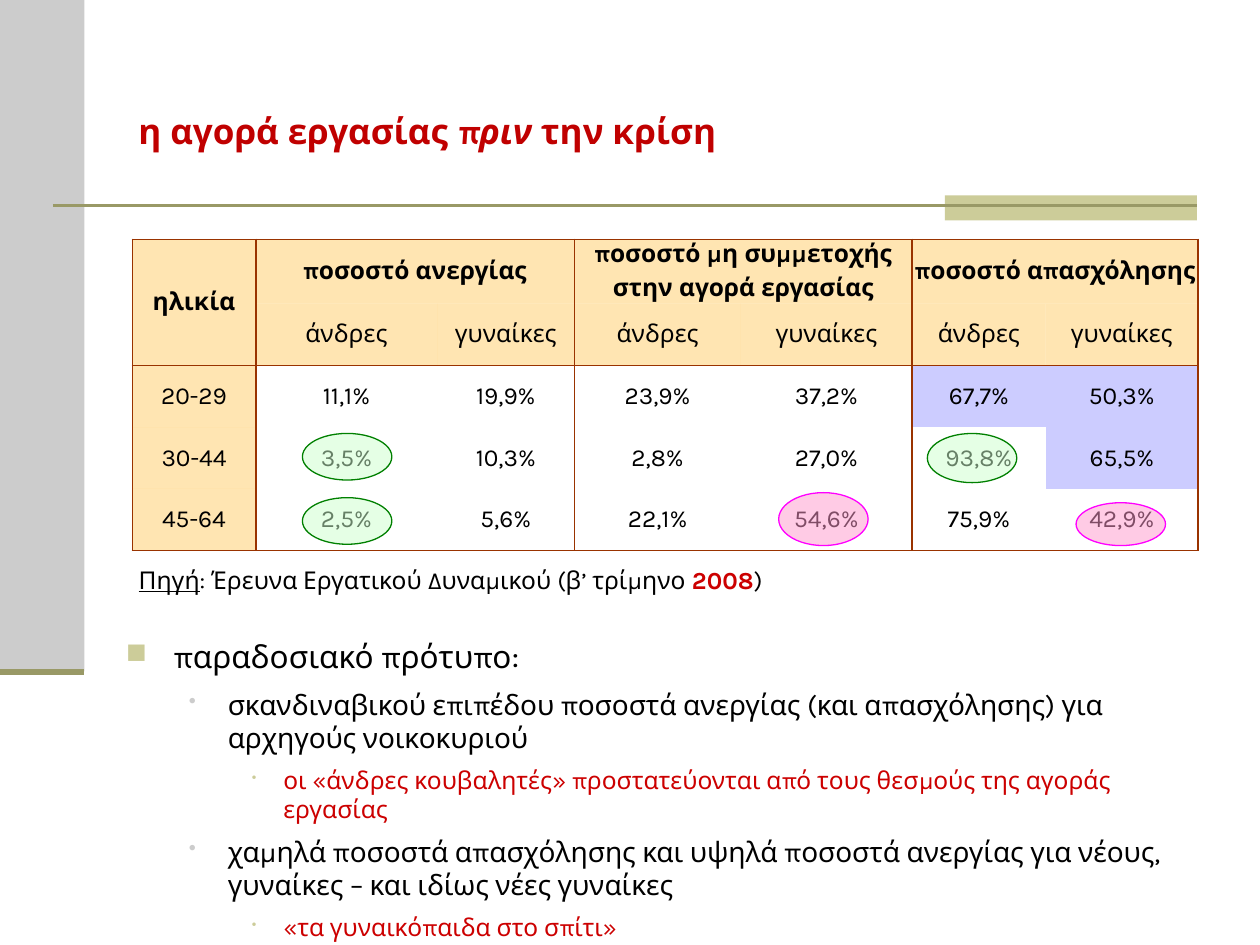
from lxml import etree
from pptx import Presentation
from pptx.dml.color import RGBColor
from pptx.enum.shapes import MSO_CONNECTOR, MSO_SHAPE
from pptx.enum.text import MSO_ANCHOR, PP_ALIGN
from pptx.oxml.ns import qn
from pptx.util import Inches, Pt

RECTANGLE, OVAL = MSO_SHAPE.RECTANGLE, MSO_SHAPE.OVAL
STRAIGHT = MSO_CONNECTOR.STRAIGHT
TOP, MIDDLE = MSO_ANCHOR.TOP, MSO_ANCHOR.MIDDLE
LEFT, CENTER = PP_ALIGN.LEFT, PP_ALIGN.CENTER

COLORS = {
    "black": "000000", "title": "C00000", "red": "CC0000",
    "gray": "CCCCCC", "khaki": "CCCC99", "olive": "999966",
    "header": "FFCC66", "border": "993300", "lilac": "CCCCFF",
    "mint": "CCFFCC", "green": "008000", "pink": "FF99CC", "magenta": "FF00FF",
}

COLUMN_WIDTHS = [0.98, 1.44, 1.09, 1.32, 1.36, 1.06, 1.21]
ROW_HEIGHTS = [0.51] + [0.49] * 5
GROUPS = ["ποσοστό ανεργίας", "ποσοστό μη συμμετοχής\nστην αγορά εργασίας", "ποσοστό απασχόλησης"]
RATES = [
    ["20-29", "11,1%", "19,9%", "23,9%", "37,2%", "67,7%", "50,3%"],
    ["30-44", "3,5%", "10,3%", "2,8%", "27,0%", "93,8%", "65,5%"],
    ["45-64", "2,5%", "5,6%", "22,1%", "54,6%", "75,9%", "42,9%"],
]
SOURCE_ROW = 5
HIGHLIGHTED = {(2, 5), (2, 6), (3, 6)}
SOURCE = [
    ("Πηγή", {"underline": True}),
    (": Έρευνα Εργατικού Δυναμικού (β’ τρίμηνο ", {}),
    ("2008", {"color": "red", "bold": True}),
    (")", {}),
]
LEVELS = [
    {"margin": 0.38, "hang": 0.38, "char": "■", "bullet": "khaki", "percent": 90, "size": 18, "color": "black"},
    {"margin": 0.81, "hang": 0.31, "char": "•", "bullet": "gray", "percent": 75, "size": 16, "color": "black"},
    {"margin": 1.25, "hang": 0.25, "char": "•", "bullet": "khaki", "percent": 55, "size": 14, "color": "red"},
]
POINTS = [
    (0, "παραδοσιακό πρότυπο:"),
    (1, "σκανδιναβικού επιπέδου ποσοστά ανεργίας (και απασχόλησης) για αρχηγούς νοικοκυριού"),
    (2, "οι «άνδρες κουβαλητές» προστατεύονται από τους θεσμούς της αγοράς εργασίας"),
    (1, "χαμηλά ποσοστά απασχόλησης και υψηλά ποσοστά ανεργίας για νέους, γυναίκες – και ιδίως νέες γυναίκες"),
    (2, "«τα γυναικόπαιδα στο σπίτι»"),
]
MARKS = [
    (7.36, 3.44, 0.39, "mint", "green"),
    (2.4, 3.44, 0.37, "mint", "green"),
    (8.54, 3.99, 0.34, "pink", "magenta"),
    (6.18, 3.91, 0.42, "pink", "magenta"),
    (2.4, 3.95, 0.37, "mint", "green"),
]


def rgb(name):
    return RGBColor.from_string(COLORS[name])


def write(para, text, size=14, color="black", bold=False, italic=False, underline=False):
    span = para.add_run()
    span.text = text
    font = span.font
    font.name, font.size = "Karla", Pt(size)
    font.bold, font.italic, font.underline = bold, italic, underline
    font.color.rgb = rgb(color)


def paint(fill, color, opacity=100):
    fill.solid()
    fill.fore_color.rgb = rgb(color)
    if opacity < 100:
        tint = fill._xPr.find(qn("a:solidFill")).find(qn("a:srgbClr"))
        etree.SubElement(tint, qn("a:alpha"), val=str(opacity * 1000))


def set_borders(cell, sides):
    properties = cell._tc.get_or_add_tcPr()
    for side in "LRTB":
        edge = etree.SubElement(properties, qn("a:ln" + side), w=str(Pt(1)))
        if side in sides:
            solid = etree.SubElement(edge, qn("a:solidFill"))
            etree.SubElement(solid, qn("a:srgbClr"), val=COLORS["border"])
        else:
            etree.SubElement(edge, qn("a:noFill"))


def border_sides(row, column):
    sides = "T" if row in (0, 2, SOURCE_ROW) else ""
    if row < SOURCE_ROW:
        if column == 0 or column % 2:
            sides += "L"
        if column % 2 == 0 or row == 0:
            sides += "R"
        if row in (1, 4) or (row, column) == (0, 0):
            sides += "B"
    return sides


class SlideBuilder:
    def __init__(self, page):
        self.page = page

    def shape(self, kind, left, top, width, height, fill, line=None, opacity=100):
        shape = self.page.shapes.add_shape(kind, Inches(left), Inches(top), Inches(width), Inches(height))
        shape.shadow.inherit = False
        paint(shape.fill, fill, opacity)
        if line:
            shape.line.color.rgb = rgb(line)
            shape.line.width = Pt(0.75)
        else:
            shape.line.fill.background()

    def rule(self, left, right, top, width):
        line = self.page.shapes.add_connector(STRAIGHT, Inches(left), Inches(top), Inches(right), Inches(top))
        line.line.color.rgb = rgb("olive")
        line.line.width = Pt(width)
        etree.SubElement(line._element.spPr, qn("a:effectLst"))

    def text_box(self, left, top, width, height, anchor):
        box = self.page.shapes.add_textbox(Inches(left), Inches(top), Inches(width), Inches(height))
        box.text_frame.word_wrap = True
        box.text_frame.vertical_anchor = anchor
        return box.text_frame

    def title(self, spans):
        para = self.text_box(1, 0.52, 8.5, 1.03, MIDDLE).paragraphs[0]
        for text, italic in spans:
            write(para, text, size=20, color="title", bold=True, italic=italic)

    def bullets(self, points):
        frame = self.text_box(0.9, 5.01, 8.54, 2.49, TOP)
        for index, (depth, text) in enumerate(points):
            level = LEVELS[depth]
            para = frame.paragraphs[0] if index == 0 else frame.add_paragraph()
            para.level = depth
            properties = para._p.get_or_add_pPr()
            properties.set("marL", str(Inches(level["margin"])))
            properties.set("indent", str(-Inches(level["hang"])))
            tint = etree.SubElement(properties, qn("a:buClr"))
            etree.SubElement(tint, qn("a:srgbClr"), val=COLORS[level["bullet"]])
            etree.SubElement(properties, qn("a:buSzPct"), val=str(level["percent"] * 1000))
            etree.SubElement(properties, qn("a:buChar"), char=level["char"])
            gap = Pt(level["size"] * 0.2)
            if index < len(points) - 1:
                para.space_after = gap
            if index:
                para.space_before = gap
            write(para, text, size=level["size"], color=level["color"])

    def cell(self, cell, lines, align=CENTER, inset=0):
        cell.vertical_anchor = MIDDLE
        cell.margin_left = Inches(inset)
        cell.margin_right = cell.margin_top = cell.margin_bottom = 0
        for index, spans in enumerate(lines):
            para = cell.text_frame.paragraphs[0] if index == 0 else cell.text_frame.add_paragraph()
            para.alignment = align
            if index:
                para.space_before = Pt(2.8)
            for text, style in spans:
                write(para, text, **style)

    def table(self):
        frame = self.page.shapes.add_table(
            len(ROW_HEIGHTS), len(COLUMN_WIDTHS), Inches(1.05), Inches(1.9),
            Inches(sum(COLUMN_WIDTHS)), Inches(sum(ROW_HEIGHTS)))
        table = frame.table
        table.first_row = table.horz_banding = False
        for column, width in zip(table.columns, COLUMN_WIDTHS):
            column.width = Inches(width)
        for row, height in zip(table.rows, ROW_HEIGHTS):
            row.height = Inches(height)
        for row in range(len(ROW_HEIGHTS)):
            for column in range(len(COLUMN_WIDTHS)):
                cell = table.cell(row, column)
                set_borders(cell, border_sides(row, column))
                if row < 2 or (column == 0 and row < SOURCE_ROW):
                    paint(cell.fill, "header", 50)
                elif (row, column) in HIGHLIGHTED:
                    paint(cell.fill, "lilac")
                else:
                    cell.fill.background()
        table.cell(0, 0).merge(table.cell(1, 0))
        self.cell(table.cell(0, 0), [[("ηλικία", {"bold": True})]])
        for column, group in zip((1, 3, 5), GROUPS):
            table.cell(0, column).merge(table.cell(0, column + 1))
            self.cell(table.cell(0, column), [[(line, {"bold": True})] for line in group.split("\n")])
            for offset, label in enumerate(("άνδρες", "γυναίκες")):
                self.cell(table.cell(1, column + offset), [[(label, {})]])
        for row, values in enumerate(RATES, start=2):
            for column, value in enumerate(values):
                self.cell(table.cell(row, column), [[(value, {})]])
        table.cell(SOURCE_ROW, 0).merge(table.cell(SOURCE_ROW, len(COLUMN_WIDTHS) - 1))
        self.cell(table.cell(SOURCE_ROW, 0), [SOURCE], align=LEFT, inset=0.05)


def main():
    deck = Presentation()
    deck.slide_width, deck.slide_height = Inches(10), Inches(7.5)
    slide = SlideBuilder(deck.slides.add_slide(deck.slide_layouts[6]))
    slide.shape(RECTANGLE, 0, 0, 0.67, 5.33, "gray")
    slide.shape(RECTANGLE, 7.5, 1.55, 2, 0.2, "khaki")
    slide.rule(0.42, 9.5, 1.63, 1.5)
    slide.rule(0, 0.67, 5.33, 3.5)
    slide.title([("η αγορά εργασίας ", False), ("πριν", True), (" την κρίση", False)])
    slide.table()
    slide.bullets(POINTS)
    for left, top, height, fill, line in MARKS:
        slide.shape(OVAL, left, top, 0.71, height, fill, line, opacity=50)
    deck.save("out.pptx")


if __name__ == "__main__":
    main()
